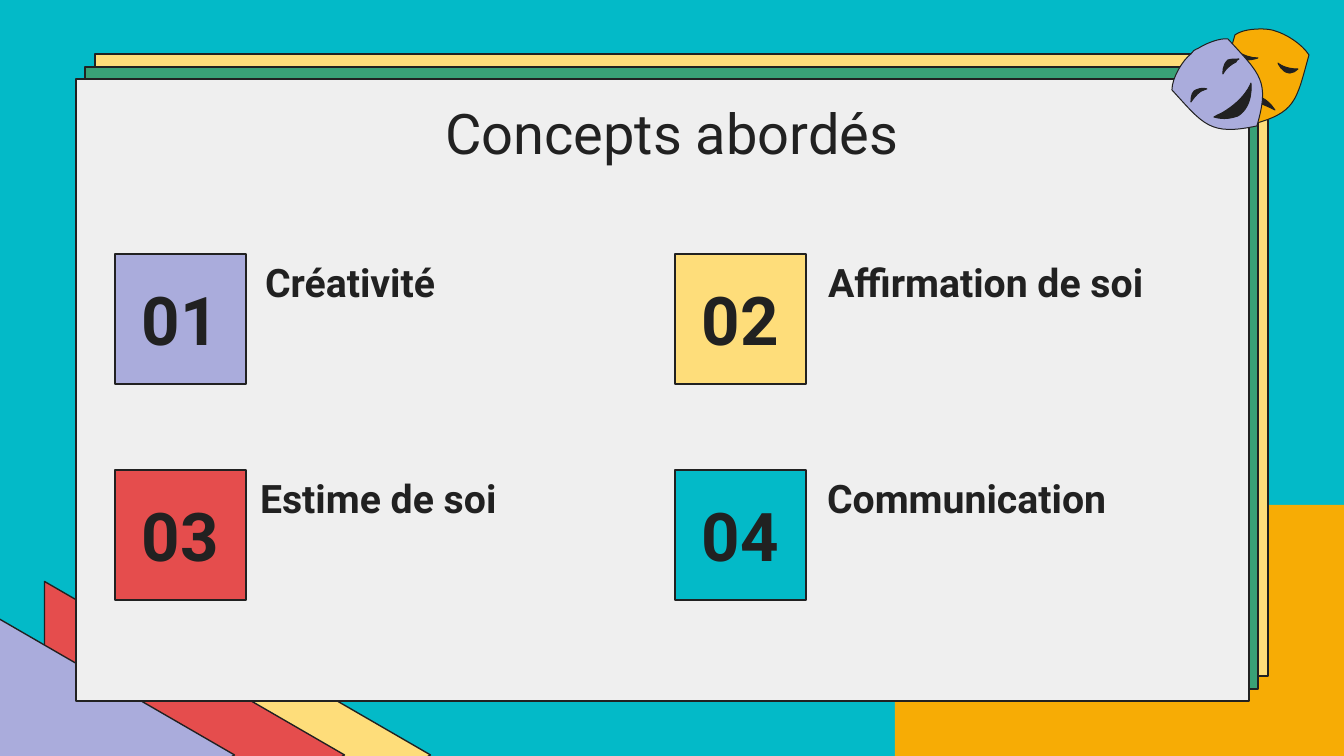
"""Build the "Concepts abordés" slide with stacked cards, four numbered concepts and theatre masks."""
from pptx import Presentation
from pptx.dml.color import RGBColor
from pptx.enum.shapes import MSO_SHAPE
from pptx.enum.text import MSO_ANCHOR, PP_ALIGN
from pptx.oxml.ns import qn
from pptx.util import Pt

RECTANGLE, TRIANGLE = MSO_SHAPE.RECTANGLE, MSO_SHAPE.ISOSCELES_TRIANGLE
TOP, MIDDLE = MSO_ANCHOR.TOP, MSO_ANCHOR.MIDDLE
LEFT, CENTER = PP_ALIGN.LEFT, PP_ALIGN.CENTER

SCALE = 914400 / 134.4
COLORS = {
    "teal": "03BAC8",
    "yellow": "FEDD7A",
    "red": "E54D4D",
    "lilac": "AAACDC",
    "orange": "F7AC05",
    "green": "39A176",
    "paper": "EFEFEF",
    "ink": "212121",
}
RGB = {name: RGBColor.from_string(value) for name, value in COLORS.items()}


def paint(shape, color, line_width=0.75):
    shape.shadow.inherit = False
    shape.fill.solid()
    shape.fill.fore_color.rgb = RGB[color]
    if line_width:
        shape.line.color.rgb = RGB["ink"]
        shape.line.width = Pt(line_width)
    else:
        shape.line.fill.background()


def write(shape, text, size, bold=False, align=LEFT, anchor=TOP, inset=0, spacing=None):
    frame = shape.text_frame
    margin = round(inset * SCALE)
    frame_format = {"word_wrap": True, "vertical_anchor": anchor}
    for side in ("left", "right", "top", "bottom"):
        frame_format[f"margin_{side}"] = margin
    paragraph = frame.paragraphs[0]
    paragraph.text = text
    formats = (
        (frame, frame_format),
        (paragraph, {"alignment": align, "line_spacing": spacing}),
        (paragraph.runs[0].font, {"name": "Roboto", "size": Pt(size), "bold": bold}),
    )
    for target, values in formats:
        for attribute, value in values.items():
            setattr(target, attribute, value)
    paragraph.runs[0].font.color.rgb = RGB["ink"]


deck = Presentation()
deck.slide_width, deck.slide_height = round(1344 * SCALE), round(756 * SCALE)
slide = deck.slides.add_slide(deck.slide_layouts[6])
slide.background.fill.solid()
slide.background.fill.fore_color.rgb = RGB["teal"]

for left, color in ((107, "yellow"), (21, "red"), (-89, "lilac")):
    ray = slide.shapes.add_shape(TRIANGLE, *(round(v * SCALE) for v in (left, 605, 347, 300)))
    ray.rotation = 90
    paint(ray, color)

corner = slide.shapes.add_shape(RECTANGLE, *(round(v * SCALE) for v in (895, 505, 464, 251)))
paint(corner, "orange", line_width=0)

for left, top, color in ((95, 54, "yellow"), (85, 67, "green"), (76, 79, "paper")):
    card = slide.shapes.add_shape(RECTANGLE, *(round(v * SCALE) for v in (left, top, 1173, 622)))
    paint(card, color)

MASK_PARTS = {
    "sad face": ("orange", [
        (1262, 29), (1253, 29), (1242, 30), (1235, 35), (1222, 81), (1216, 91), (1250, 125),
        (1296, 113), (1296, 102), (1309, 55), (1302, 44), (1286, 34), (1275, 31),
        (1273, 30), (1267, 29), (1262, 29)]),
    "sad left eye": ("ink", [
        (1236, 51), (1239, 59), (1243, 60), (1247, 60), (1253, 60), (1258, 58), (1258, 58),
        (1251, 58), (1245, 56), (1236, 51)]),
    "sad right eye": ("ink", [
        (1278, 63), (1278, 63), (1282, 73), (1290, 73), (1293, 73), (1296, 71), (1298, 69),
        (1284, 69), (1278, 63), (1278, 63)]),
    "sad mouth": ("ink", [
        (1250, 95), (1242, 95), (1235, 98), (1235, 98), (1238, 98), (1254, 99), (1275, 110),
        (1267, 98), (1258, 95), (1250, 95)]),
    "happy face": ("lilac", [
        (1199, 48), (1195, 50), (1192, 51), (1191, 54), (1183, 60), (1172, 78), (1172, 90),
        (1204, 125), (1210, 136), (1257, 126), (1270, 81), (1261, 75), (1228, 39),
        (1220, 38), (1207, 43), (1199, 48)]),
    "happy right eye": ("ink", [
        (1228, 60), (1222, 65), (1223, 74), (1223, 74), (1223, 74), (1226, 67), (1236, 62),
        (1236, 60), (1238, 60), (1239, 59), (1235, 59), (1231, 59), (1228, 60)]),
    "happy left eye": ("ink", [
        (1196, 90), (1193, 91), (1191, 95), (1191, 102), (1196, 95), (1200, 91), (1204, 90),
        (1206, 89), (1207, 89), (1207, 89), (1207, 89), (1202, 87), (1196, 90)]),
    "happy mouth": ("ink", [
        (1251, 83), (1251, 83), (1246, 99), (1222, 113), (1219, 114), (1216, 116), (1214, 117),
        (1224, 120), (1232, 118), (1238, 116), (1254, 106), (1251, 83), (1251, 83)]),
}
for color, points in MASK_PARTS.values():
    builder = slide.shapes.build_freeform(*points[0], scale=SCALE)
    builder.add_line_segments(points[1:], close=True)
    mask_part = builder.convert_to_shape()
    segments = list(mask_part.element.iter(qn("a:lnTo")))
    for start in range(0, len(segments), 3):
        curve, *others = segments[start:start + 3]
        curve.tag = qn("a:cubicBezTo")
        for other in others:
            curve.append(other[0])
            other.getparent().remove(other)
    paint(mask_part, color, line_width=0.54)

heading = slide.shapes.add_textbox(*(round(v * SCALE) for v in (105, 99, 1134, 85)))
write(heading, "Concepts abordés", 30, align=CENTER)

CONCEPTS = (
    ("Créativité", "lilac", 252),
    ("Affirmation de soi", "yellow", 815),
    ("Estime de soi", "red", 247),
    ("Communication", "teal", 814),
)
for index, (concept, color, label_left) in enumerate(CONCEPTS):
    row, column = divmod(index, 2)
    top = 254 + 216 * row
    label = slide.shapes.add_textbox(*(round(v * SCALE) for v in (label_left, top, 415, 77)))
    write(label, concept, 21, bold=True, inset=13, spacing=0.8)
    number = slide.shapes.add_shape(
        RECTANGLE, *(round(v * SCALE) for v in (115 + 560 * column, top, 131, 130)))
    paint(number, color)
    write(number, f"{index + 1:02}", 36, bold=True, align=CENTER, anchor=MIDDLE)

deck.save("out.pptx")
